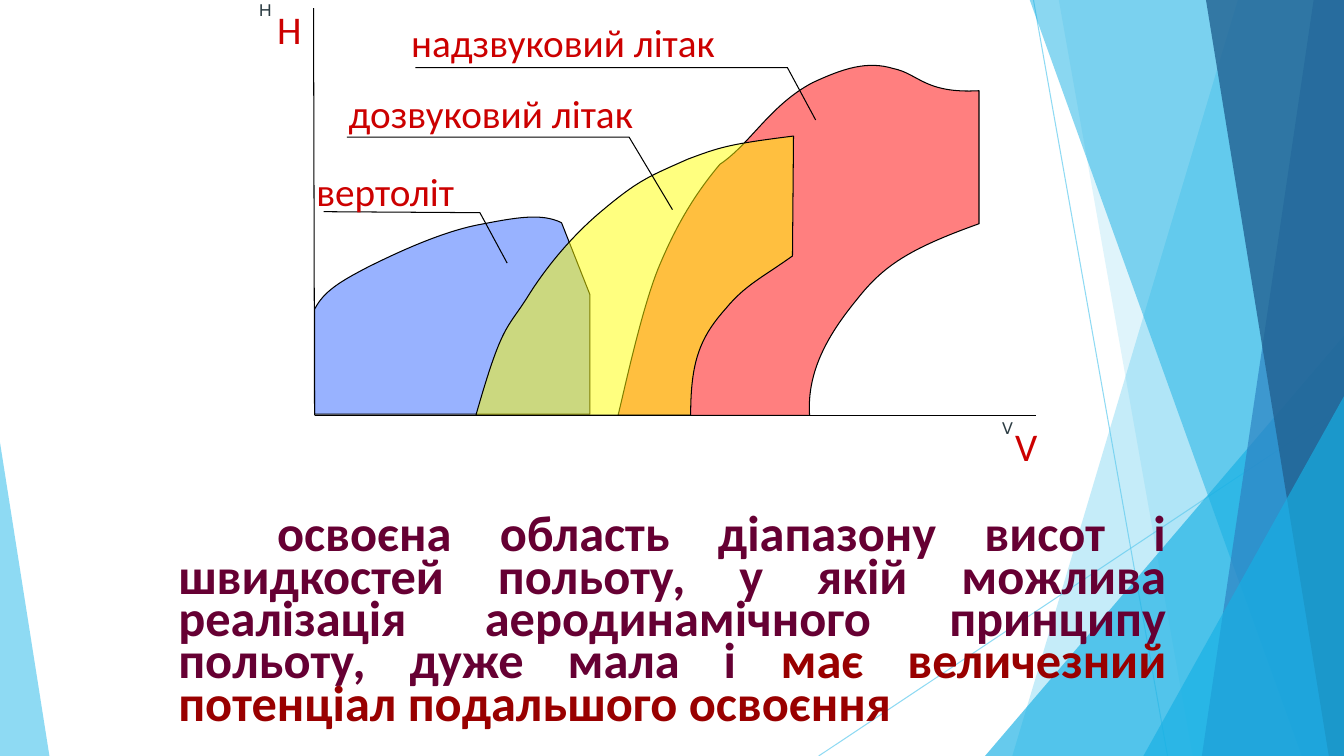
from dataclasses import dataclass
from typing import Optional

from lxml.etree import SubElement
from pptx import Presentation
from pptx.dml.color import RGBColor
from pptx.enum.shapes import MSO_CONNECTOR, MSO_SHAPE
from pptx.enum.text import MSO_ANCHOR, PP_ALIGN
from pptx.oxml.ns import qn
from pptx.util import Emu, Pt

PX = 9144  # EMU per px, 100 px to the inch
WIDTH, HEIGHT = 1333, 750

BLACK = RGBColor(0x00, 0x00, 0x00)
SKY = RGBColor(0x5F, 0xCB, 0xEF)
CYAN = RGBColor(0x17, 0xB0, 0xE4)
BLUE = RGBColor(0x2E, 0x83, 0xC3)
NAVY = RGBColor(0x22, 0x62, 0x92)
RED = RGBColor(0xFF, 0x00, 0x00)
YELLOW = RGBColor(0xFF, 0xFF, 0x00)
INDIGO = RGBColor(0x33, 0x66, 0xFF)
LABEL_RED = RGBColor(0xCC, 0x00, 0x00)
SLATE = RGBColor(0x2C, 0x3C, 0x43)
PLUM = RGBColor(0x66, 0x00, 0x33)
MAROON = RGBColor(0x99, 0x00, 0x00)


@dataclass
class Line:
    start: tuple[int, int]
    end: tuple[int, int]
    color: RGBColor = BLACK
    opacity: int = 100


@dataclass
class Outline:
    """Steps of two numbers are straight, steps of six are Bezier curves."""
    steps: list[tuple[int, ...]]
    fill: Optional[RGBColor] = None
    opacity: int = 100
    edge: Optional[RGBColor] = BLACK


@dataclass
class Triangle:
    box: tuple[int, int, int, int]
    apex: float
    fill: RGBColor
    opacity: int


@dataclass
class Label:
    text: str
    box: tuple[int, int, int, int]
    size: int = 28
    font: str = "Calibri"
    color: RGBColor = LABEL_RED
    inset: Optional[int] = None


def band(top: int, bottom: int, fill: RGBColor, opacity: int) -> Outline:
    """A band from a slanted left edge to the right side of the slide."""
    return Outline([(top, -1), (WIDTH, -1), (WIDTH, HEIGHT), (bottom, HEIGHT)],
                   fill, opacity, None)


BACKDROP = [
    Line((1025, 0), (1158, HEIGHT), SKY, 70),
    Line((WIDTH, 403), (812, HEIGHT), SKY, 70),
    band(1228, 1004, SKY, 36),
    band(1050, 1183, SKY, 20),
    Triangle((977, 333, 356, 417), 1, CYAN, 66),
    band(1021, 1291, CYAN, 50),
    band(1303, 1192, BLUE, 70),
    band(1196, 1318, NAVY, 80),
    Triangle((1134, 393, 199, 357), 1, CYAN, 66),
    Triangle((0, 439, 49, 311), 0, SKY, 70),
]

SUPERSONIC = Outline([
    (613, 412), (619, 388, 636, 308, 653, 266), (670, 225, 688, 194, 714, 163),
    (744, 143, 764, 104, 806, 82), (836, 68, 860, 60, 886, 68),
    (911, 73, 917, 93, 971, 90), (971, 222), (901, 247, 876, 264, 850, 297),
    (823, 330, 800, 367, 803, 412)], RED, 50)
HELICOPTER = Outline([
    (312, 411), (312, 307), (321, 289, 338, 279, 365, 265),
    (393, 251, 438, 230, 475, 223), (511, 216, 537, 211, 557, 221),
    (585, 292), (585, 411)], INDIGO, 50)
SUBSONIC = Outline([
    (472, 412), (498, 321, 502, 328, 523, 295), (544, 261, 571, 231, 596, 210),
    (634, 178, 644, 175, 682, 158), (714, 146, 723, 143, 787, 135), (786, 254),
    (755, 276, 739, 283, 720, 306), (694, 335, 685, 359, 685, 412)], YELLOW, 50)

CHART = [
    SUPERSONIC,
    Outline([(311, 8), (312, 412)]),
    Line((312, 412), (1028, 412)),
    HELICOPTER,
    SUBSONIC,
    Outline([(321, 210), (476, 211), (503, 261)]),
    Outline([(344, 136), (624, 136), (667, 208)]),
    Outline([(412, 67), (781, 67), (809, 119)]),
]

LABELS = [
    Label("V", (994, 414, 82, 50), 12, "Cabin", SLATE, 0),
    Label("H", (257, 0, 55, 101), 12, "Cabin", SLATE, 0),
    Label("дозвуковий літак", (336, 84, 338, 60)),
    Label("вертоліт", (304, 161, 241, 80)),
    Label("надзвуковий літак", (398, 13, 434, 60)),
    Label("H", (265, 0, 39, 60)),
    Label("V", (997, 414, 39, 60)),
]

CONCLUSION_BOX = (167, 509, 1000, 207)
CONCLUSION = [
    ("освоєна область діапазону висот і швидкостей польоту, у якій можлива "
     "реалізація аеродинамічного принципу польоту, дуже мала і ", PLUM),
    ("має величезний потенціал подальшого освоєння", MAROON),
]


def emu(lengths: tuple[int, ...]) -> list[Emu]:
    return [Emu(length * PX) for length in lengths]


def set_opacity(drawn, percent: int) -> None:
    if percent < 100:
        for color in drawn._element.spPr.iter(qn("a:srgbClr")):
            SubElement(color, qn("a:alpha"), val=str(percent * 1000))


def bend(drawn, steps: list[tuple[int, ...]]) -> None:
    """Join the three straight segments of each curved step into one Bezier."""
    segments = iter(list(drawn._element.spPr.iter(qn("a:lnTo"))))
    for step in steps:
        first = next(segments)
        if len(step) == 6:
            first.tag = qn("a:cubicBezTo")
            for _ in range(2):
                extra = next(segments)
                first.append(extra[0])
                extra.getparent().remove(extra)


def paint(drawn, fill: Optional[RGBColor], opacity: int, edge: Optional[RGBColor]) -> None:
    drawn.shadow.inherit = False
    if fill is None:
        drawn.fill.background()
    else:
        drawn.fill.solid()
        drawn.fill.fore_color.rgb = fill
        set_opacity(drawn, opacity)
    if edge is None:
        drawn.line.fill.background()
    else:
        drawn.line.color.rgb = edge
        drawn.line.width = Pt(0.75)


def draw_line(shapes, line: Line) -> None:
    drawn = shapes.add_connector(MSO_CONNECTOR.STRAIGHT, *emu(line.start + line.end))
    drawn.line.color.rgb = line.color
    drawn.line.width = Pt(0.75)
    set_opacity(drawn, line.opacity)
    SubElement(drawn._element.spPr, qn("a:effectLst"))


def draw_outline(shapes, outline: Outline) -> None:
    start, *steps = outline.steps
    points = [step[i:i + 2] for step in steps for i in range(0, len(step), 2)]
    builder = shapes.build_freeform(*start, scale=PX)
    builder.add_line_segments(points, close=outline.fill is not None)
    drawn = builder.convert_to_shape()
    bend(drawn, steps)
    paint(drawn, outline.fill, outline.opacity, outline.edge)


def draw_triangle(shapes, triangle: Triangle) -> None:
    drawn = shapes.add_shape(MSO_SHAPE.ISOSCELES_TRIANGLE, *emu(triangle.box))
    drawn.adjustments[0] = triangle.apex
    paint(drawn, triangle.fill, triangle.opacity, None)


def add_text(shapes, box: tuple[int, int, int, int], runs: list[tuple[str, RGBColor]],
             font_format: dict, inset: Optional[int] = None):
    frame = shapes.add_textbox(*emu(box)).text_frame
    frame.word_wrap = True
    frame.vertical_anchor = MSO_ANCHOR.TOP
    if inset is not None:
        for side in ("left", "top", "right", "bottom"):
            setattr(frame, f"margin_{side}", Emu(inset * PX))
    paragraph = frame.paragraphs[0]
    for text, color in runs:
        run = paragraph.add_run()
        run.text = text
        run.font.color.rgb = color
        for name, value in font_format.items():
            setattr(run.font, name, value)
    return paragraph


def main() -> None:
    deck = Presentation()
    deck.slide_width, deck.slide_height = emu((WIDTH, HEIGHT))
    shapes = deck.slides.add_slide(deck.slide_layouts[6]).shapes
    draw = {Line: draw_line, Outline: draw_outline, Triangle: draw_triangle}

    # Backdrop facets
    for part in BACKDROP:
        draw[type(part)](shapes, part)

    # Conclusion
    conclusion = add_text(shapes, CONCLUSION_BOX, CONCLUSION,
                          {"name": "Calibri", "size": Pt(36), "bold": True})
    conclusion.alignment = PP_ALIGN.JUSTIFY
    conclusion.line_spacing = 0.7
    conclusion._p.get_or_add_pPr().set("indent", str(98 * PX))

    # Flight envelopes, axes and leaders
    for part in CHART:
        draw[type(part)](shapes, part)

    # Axis and aircraft labels
    for label in LABELS:
        add_text(shapes, label.box, [(label.text, label.color)],
                 {"name": label.font, "size": Pt(label.size)}, label.inset)

    deck.save("out.pptx")


if __name__ == "__main__":
    main()
